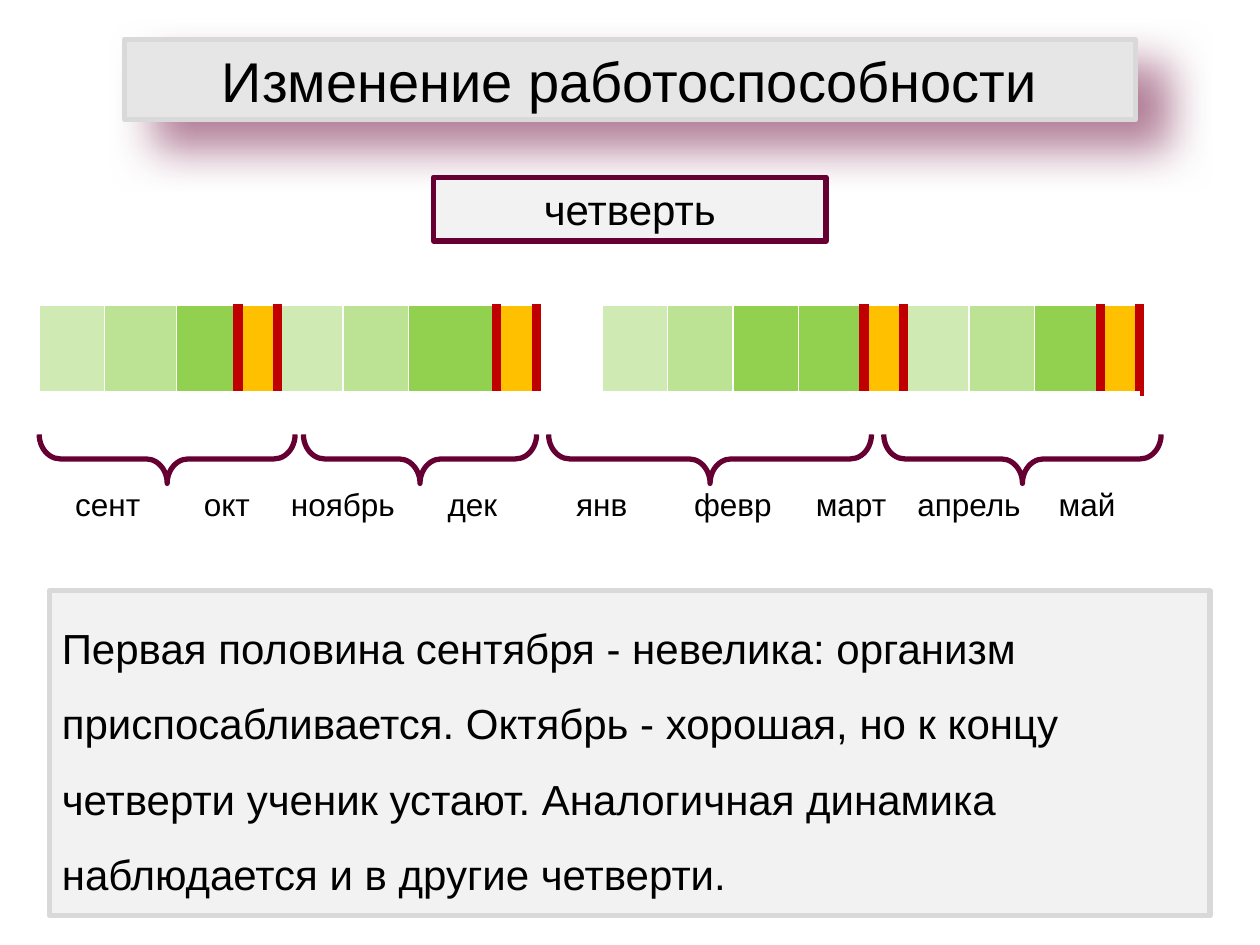
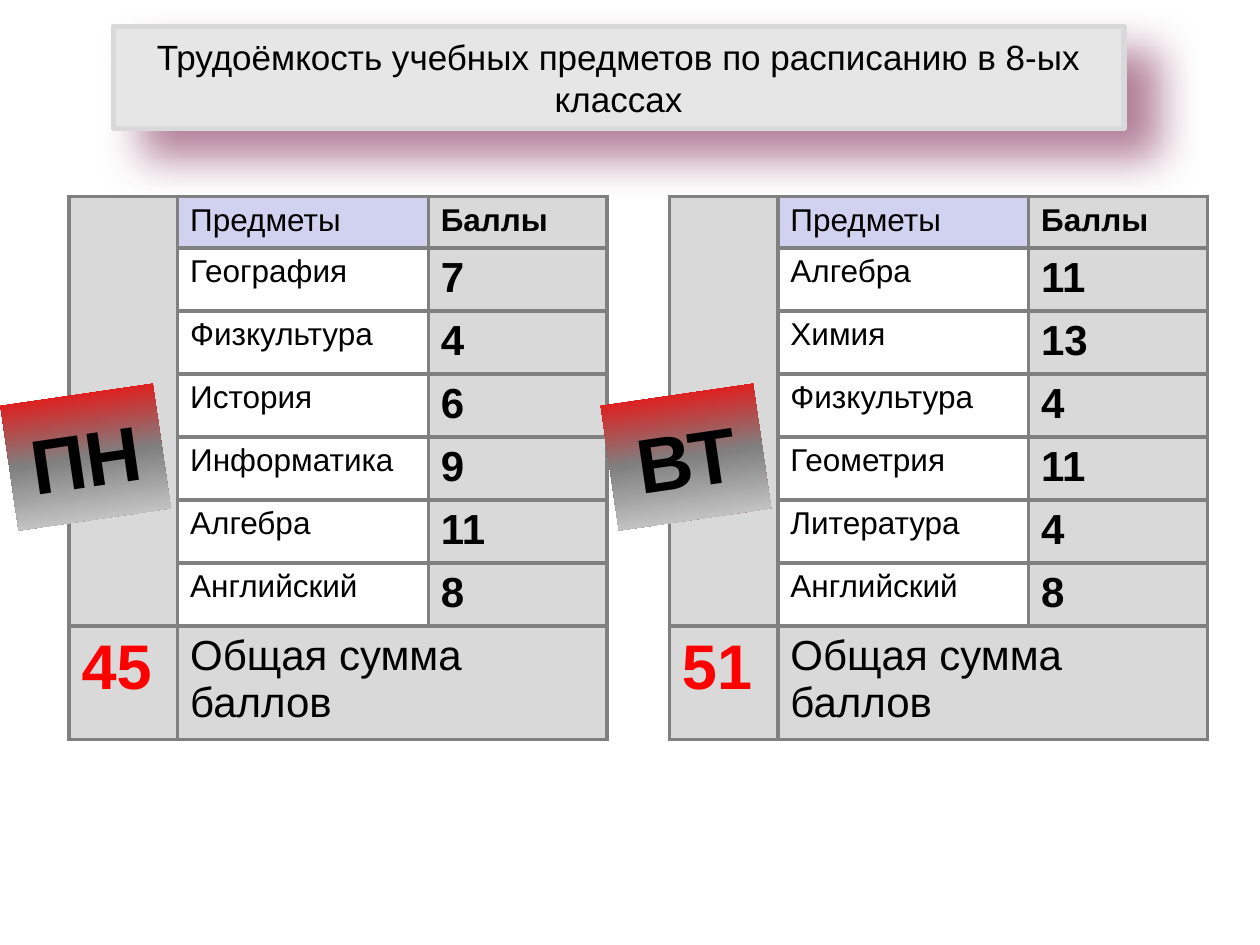
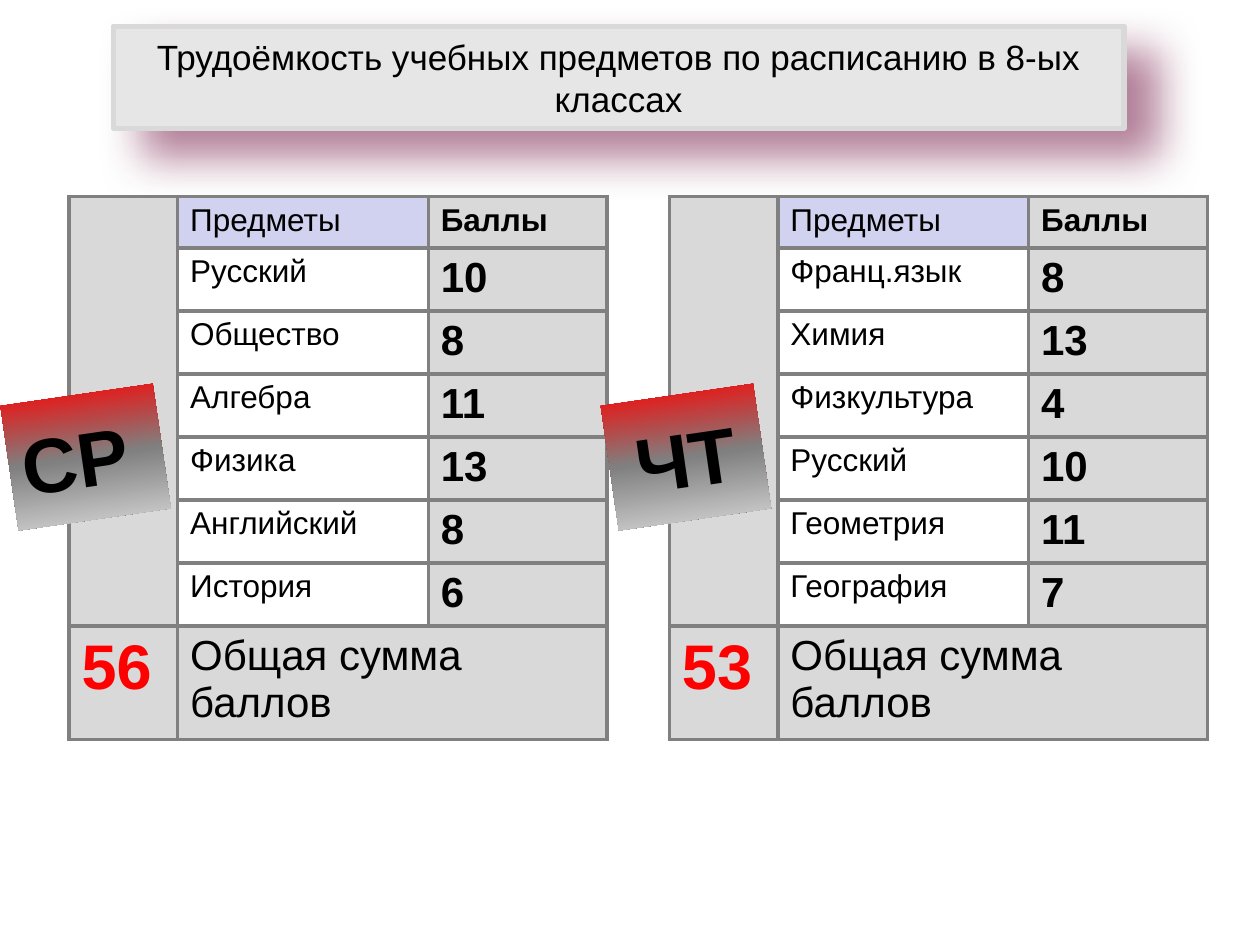
import pptx
import pptx.dml.color
import pptx.enum.shapes
import pptx.enum.text
import pptx.oxml
import pptx.oxml.ns
import pptx.util

Pt = pptx.util.Pt
RGB = pptx.dml.color.RGBColor
SHAPE = pptx.enum.shapes.MSO_SHAPE
ALIGN = pptx.enum.text.PP_ALIGN
ANCHOR = pptx.enum.text.MSO_ANCHOR
qn = pptx.oxml.ns.qn

BLACK = RGB(0x00, 0x00, 0x00)
WHITE = RGB(0xFF, 0xFF, 0xFF)
PLUM = RGB(0x66, 0x00, 0x33)
TITLE_GREY = RGB(0xE6, 0xE6, 0xE6)
PANEL_GREY = RGB(0xF2, 0xF2, 0xF2)
PALE_GREY = RGB(0xD9, 0xD9, 0xD9)
MID_GREY = RGB(0x80, 0x80, 0x80)
LILAC = RGB(0xD1, 0xD1, 0xF0)
RED = RGB(0xFF, 0x00, 0x00)
DARK_RED = RGB(0xC0, 0x00, 0x00)
GREEN = RGB(0x92, 0xD0, 0x50)
AMBER = RGB(0xFF, 0xC0, 0x00)
FONT = "Arial"


def xml(text):
    head, space, rest = text.partition(" ")
    return pptx.oxml.parse_xml(f"{head} {pptx.oxml.ns.nsdecls('a')} {rest}")


class Deck:
    def __init__(self):
        self.show = pptx.Presentation()
        self.show.slide_width, self.show.slide_height = Pt(720), Pt(540)
        self.slide = None

    def put_text(self, frame, text, size, color=BLACK, bold=False, align=ALIGN.LEFT):
        frame.text = text
        paragraph = frame.paragraphs[0]
        paragraph.alignment = align
        for run in paragraph.runs:
            run.font.name, run.font.size = FONT, Pt(size)
            run.font.bold, run.font.color.rgb = bold, color
        return paragraph

    def frame(self, shape, fill, line):
        shape.fill.solid()
        shape.fill.fore_color.rgb = fill
        shape.line.color.rgb, shape.line.width = line, Pt(3)
        shape.shadow.inherit = False

    def add_slide(self, title, size, left, top, height):
        self.slide = self.show.slides.add_slide(self.show.slide_layouts[5])
        heading = self.slide.shapes.title
        heading.left, heading.top = Pt(left), Pt(top)
        heading.width, heading.height = Pt(577.5), Pt(height)
        self.frame(heading, TITLE_GREY, PALE_GREY)
        heading._element.spPr.find(qn("a:effectLst")).append(xml(
            f'<a:outerShdw blurRad="{Pt(25)}" dist="{Pt(23)}" dir="{40 * 60000}" '
            f'algn="tl" rotWithShape="0"><a:srgbClr val="{PLUM}">'
            '<a:alpha val="50000"/></a:srgbClr></a:outerShdw>'))
        self.put_text(heading.text_frame, title, size, align=ALIGN.CENTER)

    def shape(self, kind, left, top, width, height):
        shape = self.slide.shapes.add_shape(kind, Pt(left), Pt(top), Pt(width), Pt(height))
        shape.shadow.inherit = False
        return shape

    def panel(self, box, text, line, align):
        panel = self.shape(SHAPE.RECTANGLE, *box)
        self.frame(panel, PANEL_GREY, line)
        panel.text_frame.vertical_anchor = ANCHOR.TOP
        return self.put_text(panel.text_frame, text, 24, align=align)

    def brace(self, center, span):
        thickness, middle = 28, 262.25
        brace = self.shape(SHAPE.RIGHT_BRACE, center - thickness / 2,
                           middle - span / 2, thickness, span)
        brace.rotation = 90
        brace.adjustments[0] = 0.43
        brace.fill.background()
        brace.line.color.rgb, brace.line.width = PLUM, Pt(3)

    def day_badge(self, left, day):
        badge = self.shape(SHAPE.RECTANGLE, left, 225.25, 88, 72)
        badge.rotation = 351.7
        badge.fill.gradient()
        badge.fill.gradient_angle = 270
        stops = badge._element.spPr.find(qn("a:gradFill")).find(qn("a:gsLst"))
        for stop in list(stops):
            stops.remove(stop)
        for place, color in ((0, RED), (50, MID_GREY), (100, PALE_GREY)):
            stops.append(xml(f'<a:gs pos="{place * 1000}"><a:srgbClr val="{color}"/></a:gs>'))
        badge.line.fill.background()
        badge.text_frame.vertical_anchor = ANCHOR.MIDDLE
        self.put_text(badge.text_frame, day, 44, bold=True, align=ALIGN.CENTER)

    def table(self, left, top, widths, heights):
        table = self.slide.shapes.add_table(
            len(heights), len(widths), Pt(left), Pt(top),
            Pt(sum(widths)), Pt(sum(heights))).table
        table.first_row = table.horz_banding = False
        for column, width in zip(table.columns, widths):
            column.width = Pt(width)
        for row, height in zip(table.rows, heights):
            row.height = Pt(height)
        return table

    def cell(self, cell, fill, border, opacity=100, **sides):
        if fill is None:
            cell.fill.background()
        else:
            cell.fill.solid()
            cell.fill.fore_color.rgb = fill
        properties = cell._tc.get_or_add_tcPr()
        if opacity < 100:
            properties.find(qn("a:solidFill"))[0].append(
                xml(f'<a:alpha val="{opacity * 1000}"/>'))
        for index, side in enumerate("LRTB"):
            color, width = sides.get(side, border)
            properties.insert(index, xml(
                f'<a:ln{side} w="{Pt(width)}"><a:solidFill><a:srgbClr val="{color}"/>'
                f'</a:solidFill></a:ln{side}>'))

    def year_strip(self, phases, months):
        widths = [WIDE.get(i, PHASES[phase][2]) for i, phase in enumerate(phases)]
        strip = self.table(22.3, 174.25, widths, [50.5] * 3)
        thin, thick, holiday = (WHITE, 1), (WHITE, 3), (DARK_RED, 6)
        for i, phase in enumerate(phases):
            fill, opacity, _ = PHASES[phase]
            sides = {"B": thick}
            if phase == "h" or phases[i - 1:i] == "h":
                sides["L"] = holiday
            if phase == "h" or phases[i + 1:i + 2] == "h":
                sides["R"] = holiday
            self.cell(strip.cell(0, i), fill, thin, opacity, **sides)
            for row in (1, 2):
                self.cell(strip.cell(row, i), None, thin)
        for i, month in enumerate(months):
            for row in (1, 2):
                strip.cell(row, 2 * i).merge(strip.cell(row, 2 * i + 1))
            self.put_text(strip.cell(2, 2 * i).text_frame, month, 18, align=ALIGN.CENTER)

    def day_table(self, left, day, lessons):
        last = len(lessons) + 1
        grid = self.table(left, 112.25, [62, 143.25, 102.25],
                          [29.5] + [36] * len(lessons) + [65])
        for row in range(last + 1):
            for column in range(3):
                fill = PALE_GREY
                if column == 1 and row < last:
                    fill = WHITE if row else LILAC
                self.cell(grid.cell(row, column), fill, (MID_GREY, 2.25))
        grid.cell(0, 0).merge(grid.cell(last - 1, 0))
        grid.cell(last, 1).merge(grid.cell(last, 2))
        self.put_text(grid.cell(0, 1).text_frame, "Предметы", 18)
        self.put_text(grid.cell(0, 2).text_frame, "Баллы", 18, bold=True)
        for row, (subject, points) in enumerate(lessons, 1):
            self.put_text(grid.cell(row, 1).text_frame, subject, 18)
            self.put_text(grid.cell(row, 2).text_frame, str(points), 24, bold=True)
        total = sum(points for _, points in lessons)
        self.put_text(grid.cell(last, 0).text_frame, str(total), 36, RED, True)
        self.put_text(grid.cell(last, 1).text_frame, "Общая сумма баллов", 24)
        self.day_badge(left - 34.5, day)


PHASES = {
    "l": (GREEN, 44, 37.5),
    "m": (GREEN, 61, 37.5),
    "g": (GREEN, 100, 37.5),
    "h": (AMBER, 100, 22.5),
    "-": (None, 100, 37.5),
}
WIDE = {1: 41, 2: 35.25, 6: 50.5}
MONTHS = ["сент", "окт", "ноябрь", "дек", "янв", "февр", "март", "апрель", "май"]
QUARTERS = [(95.5, 146.25), (240, 133.25), (405.75, 184.5), (584.25, 158.5)]
SCHEDULE = [
    [("ПН", [("География", 7), ("Физкультура", 4), ("История", 6),
             ("Информатика", 9), ("Алгебра", 11), ("Английский", 8)]),
     ("ВТ", [("Алгебра", 11), ("Химия", 13), ("Физкультура", 4),
             ("Геометрия", 11), ("Литература", 4), ("Английский", 8)])],
    [("СР ", [("Русский", 10), ("Общество", 8), ("Алгебра", 11),
              ("Физика", 13), ("Английский", 8), ("История", 6)]),
     ("ЧТ", [("Франц.язык", 8), ("Химия", 13), ("Физкультура", 4),
             ("Русский", 10), ("Геометрия", 11), ("География", 7)])],
]


def main():
    deck = Deck()
    deck.add_slide("Изменение работоспособности", 32, 71.25, 22.5, 46)
    deck.panel((247.75, 101.25, 224.25, 36.5), "четверть", PLUM, ALIGN.CENTER)
    deck.year_strip("lmghlmgh-lmgghlmgh", MONTHS)
    for center, span in QUARTERS:
        deck.brace(center, span)
    summary = deck.panel(
        (28.25, 337.5, 663.25, 185.75),
        "Первая половина сентября - невелика: организм приспосабливается. "
        "Октябрь - хорошая, но к концу четверти ученик устают. "
        "Аналогичная динамика наблюдается и в другие четверти.", PALE_GREY, ALIGN.LEFT)
    summary.line_spacing = 1.5
    for days in SCHEDULE:
        deck.add_slide("Трудоёмкость учебных предметов по расписанию в 8-ых классах",
                       20, 64.75, 15, 58.25)
        for i, (day, lessons) in enumerate(days):
            deck.day_table(39.5 + 343 * i, day, lessons)
    deck.show.save("out.pptx")


if __name__ == "__main__":
    main()
